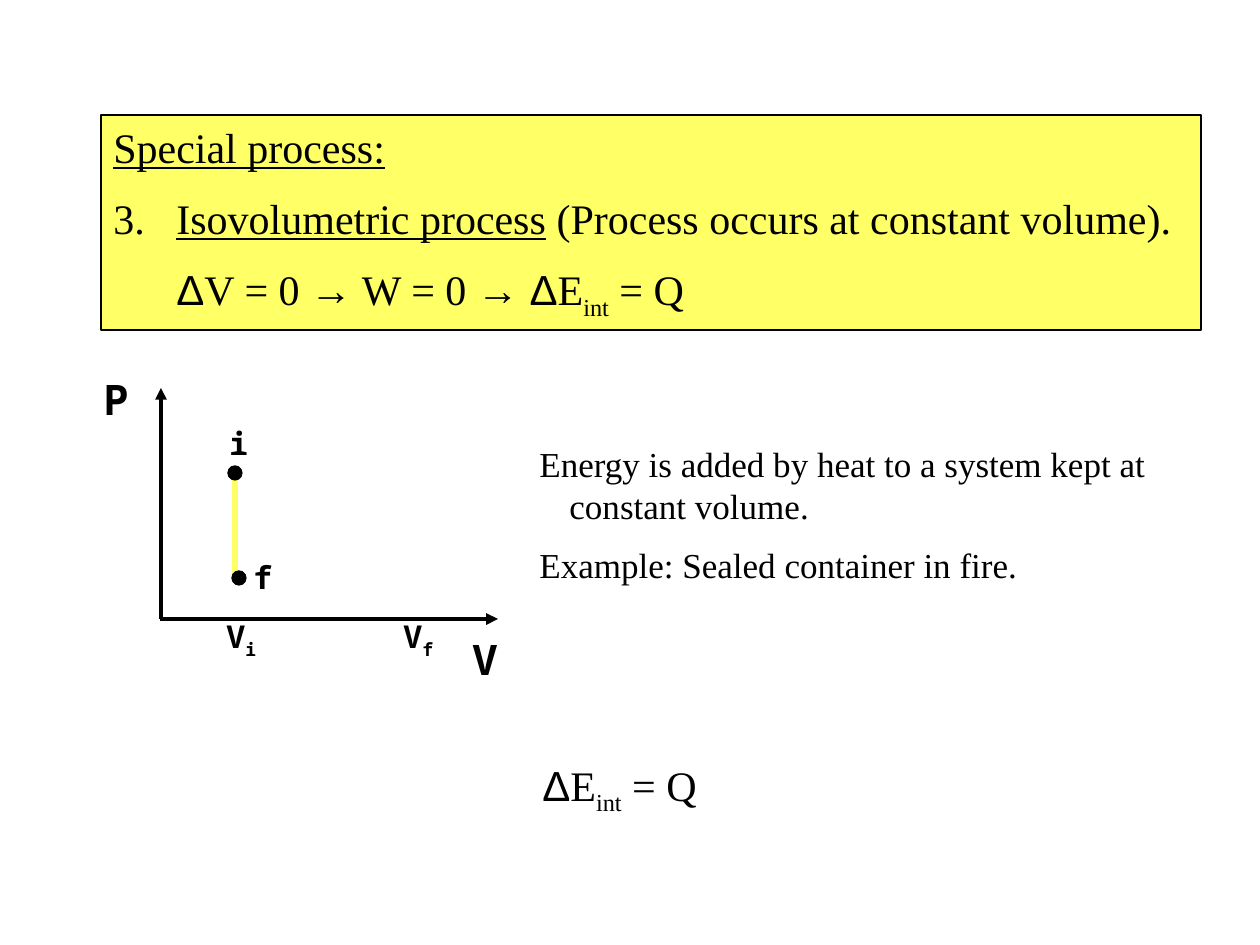
"""Slide on the isovolumetric process with its P-V diagram."""
from collections import namedtuple
from dataclasses import dataclass

from lxml import etree
from pptx import Presentation
from pptx import util as u
from pptx.dml.color import RGBColor
from pptx.enum import shapes, text
from pptx.oxml import ns

PX = u.Inches(1) / 126
Box = namedtuple("Box", "left top width height")
Span = namedtuple("Span", "text font underline subscript", defaults=("", False, False))


@dataclass(frozen=True)
class Theme:
    """Colours, fonts and type sizes of the slide."""
    ink: RGBColor = RGBColor(0, 0, 0)
    highlight: RGBColor = RGBColor(0xFF, 0xFF, 0x66)
    serif: str = "Times New Roman"
    sans: str = "Arial"
    mono: str = "Noto Sans Mono"
    large: int = 24
    medium: int = 20
    small: int = 18
    thin: float = 0.75
    thick: float = 2.25


THEME = Theme()
DELTA = Span("Δ", THEME.sans)
ENERGY = [DELTA, Span("E"), Span("int", subscript=True), Span(" = Q")]


def emu(px):
    """Turn px into EMU."""
    return u.Emu(round(px * PX))


def within(box, left, top, width, height):
    """Return a box placed relative to the corner of another."""
    return Box(box.left + left, box.top + top, width, height)


def add_xml(parent, tag, **attributes):
    """Append a DrawingML element to a parent."""
    return etree.SubElement(parent, ns.qn(tag), attributes)


def add_block(page, box, kind, fill, outlined=True):
    """Add a filled preset shape."""
    shape = page.shapes.add_shape(kind, *map(emu, box))
    shape.shadow.inherit = False
    shape.fill.solid()
    shape.fill.fore_color.rgb = fill
    if outlined:
        shape.line.color.rgb = THEME.ink
        shape.line.width = u.Pt(THEME.thin)
    else:
        shape.line.fill.background()
    return shape


def write(shape, paragraphs, size, font=THEME.serif, bold=False, margin=0, indent=0):
    """Write paragraphs of spans into a shape."""
    frame = shape.text_frame
    frame.word_wrap = True
    frame.auto_size = text.MSO_AUTO_SIZE.SHAPE_TO_FIT_TEXT
    frame.vertical_anchor = text.MSO_ANCHOR.TOP
    for index, spans in enumerate(paragraphs):
        para = frame.add_paragraph() if index else frame.paragraphs[0]
        para.alignment = text.PP_ALIGN.LEFT
        properties = para._p.get_or_add_pPr()
        properties.set("marL", str(emu(margin)))
        properties.set("indent", str(emu(indent)))
        add_xml(add_xml(properties, "a:spcBef"), "a:spcPct", val="50000")
        for span in spans:
            run = para.add_run()
            run.text = span.text
            run.font.name = span.font or font
            run.font.size = u.Pt(size)
            run.font.bold = bold
            run.font.underline = span.underline
            run.font.color.rgb = THEME.ink
            if span.subscript:
                run.font._element.set("baseline", "-25000")
    return frame


def add_text(page, box, paragraphs, size, **style):
    """Add a text box with paragraphs of spans."""
    write(page.shapes.add_textbox(*map(emu, box)), paragraphs, size, **style)


def add_arrow(page, start, end):
    """Add an axis line with an arrowhead at its end."""
    line = page.shapes.add_connector(shapes.MSO_CONNECTOR.STRAIGHT, *map(emu, start + end))
    line.line.color.rgb = THEME.ink
    line.line.width = u.Pt(THEME.thick)
    add_xml(line.line._get_or_add_ln(), "a:tailEnd", type="triangle")
    add_xml(line._element.spPr, "a:effectLst")


def add_process_panel(page, box):
    """Add the highlighted panel that defines the process."""
    panel = add_block(page, box, shapes.MSO_SHAPE.RECTANGLE, THEME.highlight)
    frame = write(panel, [
        [Span("Special process:", underline=True)],
        [Span("Isovolumetric process", underline=True),
         Span(" (Process occurs at constant volume).")],
        [DELTA, Span("V = 0 → W = 0 → "), *ENERGY],
    ], THEME.large, margin=63, indent=-63)
    _, numbered, equation = (para._p.get_or_add_pPr() for para in frame.paragraphs)
    add_xml(numbered, "a:buFont", typeface=THEME.serif)
    add_xml(numbered, "a:buAutoNum", type="arabicPeriod", startAt="3")
    equation.set("indent", "0")


def add_explanation(page, box):
    """Add the explanation with its example."""
    add_text(page, box, [
        [Span("Energy is added by heat to a system kept at constant volume.")],
        [Span("Example: Sealed container in fire.")],
    ], THEME.medium, margin=30, indent=-30)


def add_diagram(page, box):
    """Add the pressure-volume diagram with its axes, path and labels."""
    base = box.top + 252
    add_arrow(page, (box.left + 69, base), (box.left + 407, base))
    add_arrow(page, (box.left + 70, base), (box.left + 70, box.top + 21))
    add_block(page, within(box, 141, 105, 6, 106), shapes.MSO_SHAPE.RECTANGLE,
              THEME.highlight, outlined=False)
    for left, top in ((137, 99), (141, 204)):
        add_block(page, within(box, left, top, 14, 14), shapes.MSO_SHAPE.OVAL, THEME.ink)
    labels = (
        ("V", "i", 123, 244, THEME.small),
        ("V", "", 369, 260, THEME.large),
        ("V", "f", 300, 244, THEME.small),
        ("P", "", 0, 0, THEME.large),
        ("i", "", 126, 51, THEME.small),
        ("f", "", 150, 185, THEME.small),
    )
    for name, subscript, left, top, size in labels:
        spans = [Span(name)] + ([Span(subscript, subscript=True)] if subscript else [])
        height = 63 if size == THEME.large else 50
        add_text(page, within(box, left, top, 71, height), [spans], size,
                 font=THEME.mono, bold=True)


def add_result(page, box):
    """Add the resulting energy equation."""
    add_text(page, box, [ENERGY], THEME.large)


def main():
    """Build the deck and save it."""
    deck = Presentation()
    deck.slide_width, deck.slide_height = emu(1260), emu(945)
    page = deck.slides.add_slide(deck.slide_layouts[6])
    add_process_panel(page, Box(101, 115, 1100, 215))
    add_explanation(page, Box(527, 436, 634, 160))
    add_diagram(page, Box(91, 367, 440, 323))
    add_result(page, Box(530, 753, 202, 63))
    deck.save("out.pptx")


if __name__ == "__main__":
    main()
